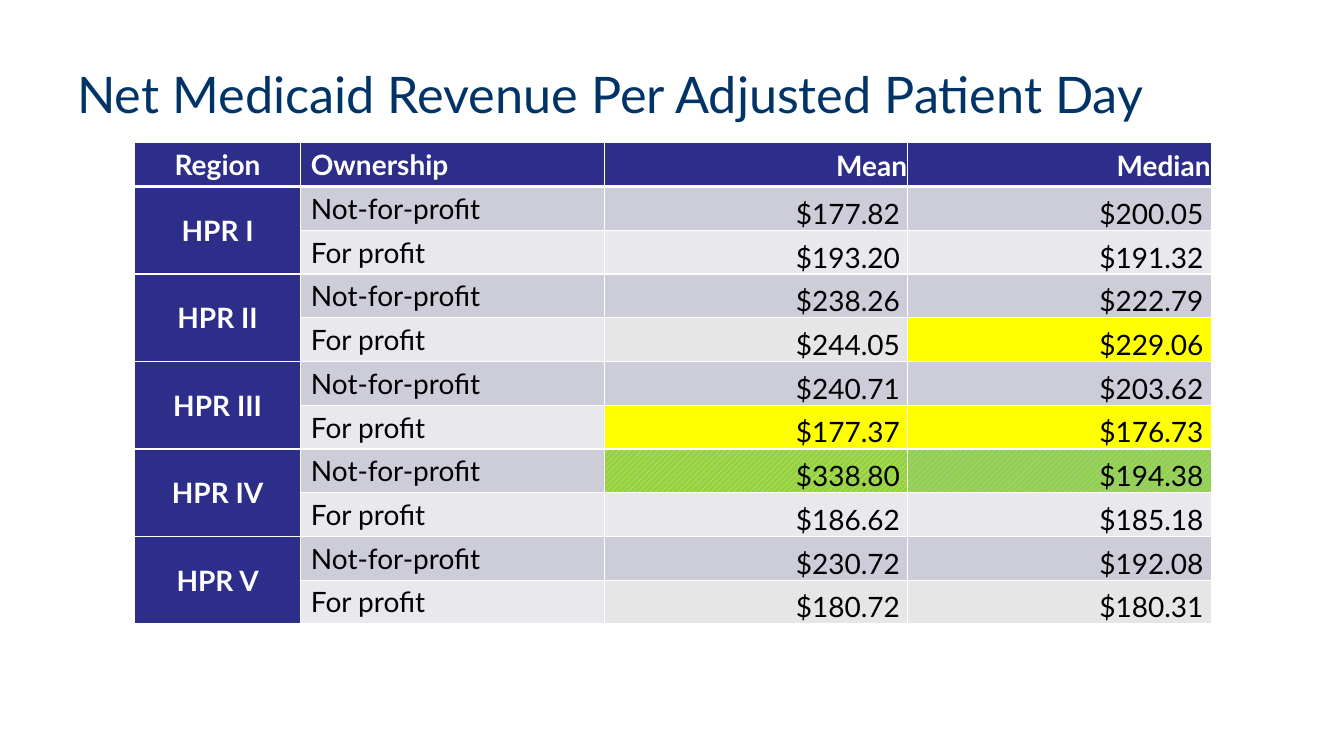
from pptx import Presentation
from pptx.dml.color import RGBColor
from pptx.enum.dml import MSO_PATTERN
from pptx.enum.text import MSO_ANCHOR as ANCHOR, PP_ALIGN as ALIGN
from pptx.oxml import parse_xml
from pptx.oxml.ns import nsdecls
from pptx.util import Cm, Pt

FONT = "Lato"
TITLE = RGBColor(0x00, 0x33, 0x66)
NAVY = RGBColor(0x2D, 0x2D, 0x8A)
WHITE = RGBColor(0xFF, 0xFF, 0xFF)
BLACK = RGBColor(0x00, 0x00, 0x00)
BAND_DARK = RGBColor(0xCD, 0xCD, 0xDA)
BAND_LIGHT = RGBColor(0xE8, 0xE8, 0xED)
GRAY = RGBColor(0xE6, 0xE6, 0xE6)
YELLOW = RGBColor(0xFF, 0xFF, 0x00)
GREEN = RGBColor(0x92, 0xD0, 0x50)

HEADERS = ["Region", "Ownership", "Mean", "Median"]
OWNERSHIP = ["Not-for-profit", "For profit"]
REGIONS = {
    "HPR I": [("$177.82", "$200.05"), ("$193.20", "$191.32")],
    "HPR II": [("$238.26", "$222.79"), ("$244.05", "$229.06")],
    "HPR III": [("$240.71", "$203.62"), ("$177.37", "$176.73")],
    "HPR IV": [("$338.80", "$194.38"), ("$186.62", "$185.18")],
    "HPR V": [("$230.72", "$192.08"), ("$180.72", "$180.31")],
}
HIGHLIGHTS = {
    (4, 2): GRAY, (4, 3): YELLOW,
    (6, 2): YELLOW, (6, 3): YELLOW,
    (10, 2): GRAY, (10, 3): GRAY,
}
HATCHES = {(7, 2): YELLOW, (7, 3): BAND_DARK}
COL_WIDTHS = [Cm(4.19), Cm(7.65), Cm(7.65), Cm(7.65)]
ROW_HEIGHT = Cm(1.1)


def add_run(p, text, size, color, bold=False):
    """Add one formatted run to a paragraph."""
    r = p.add_run()
    r.text = text
    r.font.name = FONT
    r.font.size = Pt(size)
    r.font.bold = bold
    r.font.color.rgb = color


def add_title(s, text):
    """Add the slide title."""
    sp = s.shapes.add_textbox(Cm(1.7), Cm(0.76), Cm(30.48), Cm(3.18))
    tf = sp.text_frame
    tf.word_wrap = True
    tf.vertical_anchor = ANCHOR.MIDDLE
    add_run(tf.paragraphs[0], text, 36, TITLE)


def set_borders(cell, top, bottom):
    """Draw white borders with the given top and bottom widths in points."""
    tc_pr = cell._tc.get_or_add_tcPr()
    for side, width in (("L", 1), ("R", 1), ("T", top), ("B", bottom)):
        tc_pr.append(parse_xml(
            f'<a:ln{side} {nsdecls("a")} w="{Pt(width)}"><a:solidFill>'
            f'<a:srgbClr val="{WHITE}"/></a:solidFill></a:ln{side}>'))


def fill_cell(cell, row, col):
    """Fill a cell with its band, highlight or hatching."""
    if (row, col) in HATCHES:
        cell.fill.patterned()
        cell.fill.pattern = MSO_PATTERN.WIDE_UPWARD_DIAGONAL
        cell.fill.fore_color.rgb = HATCHES[row, col]
        cell.fill.back_color.rgb = GREEN
        return
    band = BAND_DARK if row % 2 else BAND_LIGHT
    cell.fill.solid()
    cell.fill.fore_color.rgb = (
        NAVY if row == 0 or col == 0 else HIGHLIGHTS.get((row, col), band))


def write_cell(cell, text, row, col):
    """Write and align the text of a cell."""
    heading = row == 0 or col == 0
    p = cell.text_frame.paragraphs[0]
    if col == 0:
        p.alignment = ALIGN.CENTER
        cell.vertical_anchor = ANCHOR.MIDDLE
    elif col > 1:
        p.alignment = ALIGN.RIGHT
        cell.vertical_anchor = ANCHOR.MIDDLE if heading else ANCHOR.BOTTOM
        cell.margin_left = cell.margin_top = Cm(0.02)
        cell.margin_right = Cm(0.02 if heading else 0.2)
        cell.margin_bottom = 0
    add_run(p, text, 20, WHITE if heading else BLACK, heading)


def add_revenue_table(s):
    """Add the table of revenue by region and ownership."""
    rows = [HEADERS]
    for region, pairs in REGIONS.items():
        for owner, values in zip(OWNERSHIP, pairs):
            rows.append([region if owner == OWNERSHIP[0] else "", owner, *values])
    table = s.shapes.add_table(
        len(rows), len(HEADERS), Cm(3.39), Cm(3.6),
        sum(COL_WIDTHS), ROW_HEIGHT * len(rows)).table
    for column, width in zip(table.columns, COL_WIDTHS):
        column.width = width
    for i, texts in enumerate(rows):
        table.rows[i].height = ROW_HEIGHT
        for j, text in enumerate(texts):
            cell = table.cell(i, j)
            set_borders(cell, 3 if i == 1 else 1, 3 if i == 0 else 1)
            fill_cell(cell, i, j)
            if text:
                write_cell(cell, text, i, j)
    for i in range(1, len(rows), len(OWNERSHIP)):
        table.cell(i, 0).merge(table.cell(i + 1, 0))


def main():
    """Build and save the slide."""
    prs = Presentation()
    prs.slide_width, prs.slide_height = Cm(33.87), Cm(19.05)
    s = prs.slides.add_slide(prs.slide_layouts[6])
    add_title(s, "Net Medicaid Revenue Per Adjusted Patient Day")
    add_revenue_table(s)
    prs.save("out.pptx")


if __name__ == "__main__":
    main()
